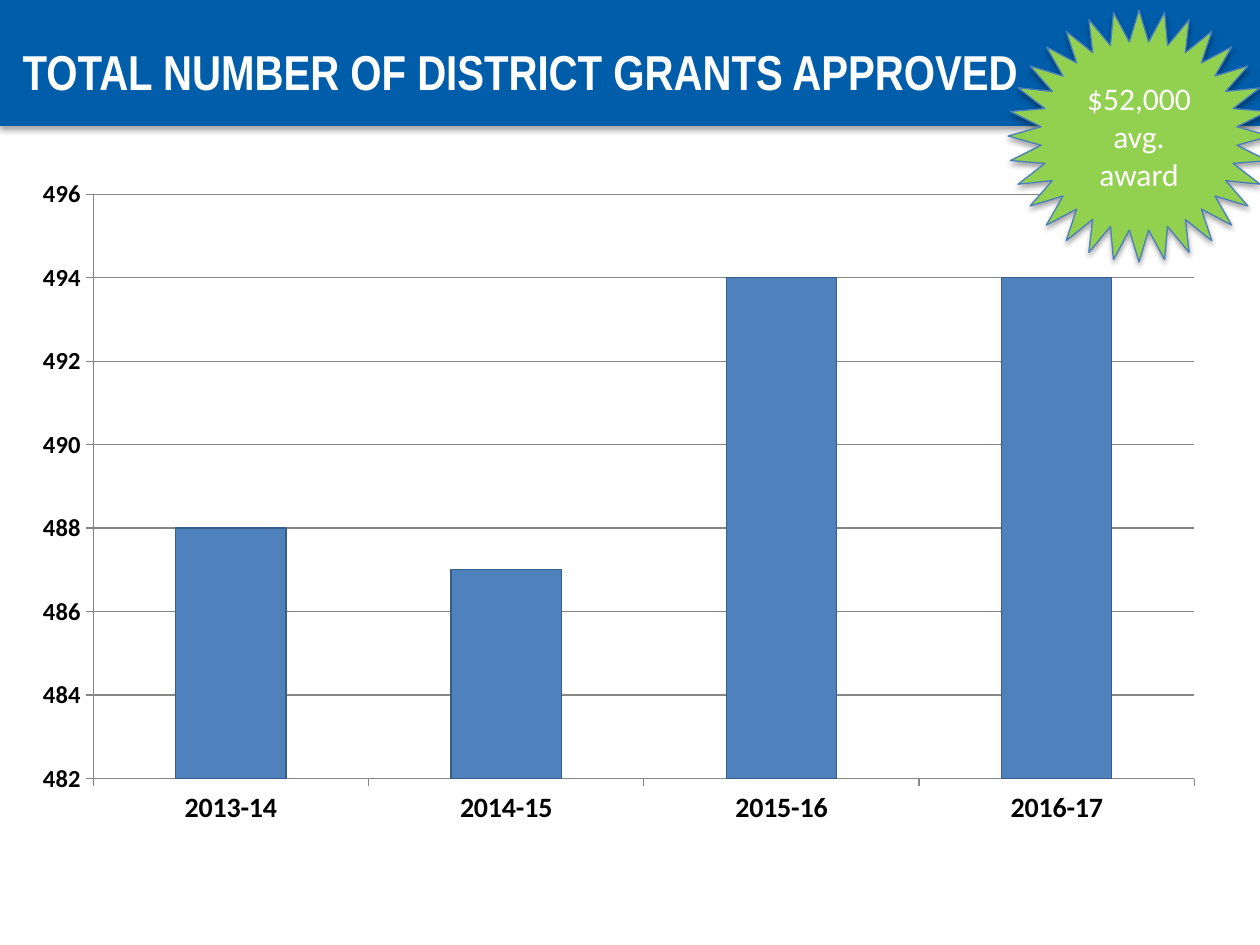
"""Build a slide with a column chart of district grants approved per year."""
from dataclasses import dataclass

from lxml.etree import SubElement
from pptx import Presentation
from pptx.chart.data import CategoryChartData
from pptx.dml.color import RGBColor as RGB
from pptx.enum.chart import XL_CHART_TYPE as Chart, XL_TICK_MARK as Tick
from pptx.enum.shapes import MSO_SHAPE as Shape
from pptx.enum.text import MSO_ANCHOR as Anchor, MSO_AUTO_SIZE as Fit, PP_ALIGN as Align
from pptx.oxml import parse_xml
from pptx.oxml.ns import nsdecls, qn
from pptx.util import Inches, Pt


@dataclass(frozen=True)
class Theme:
    band: str = "005DAA"
    star: str = "92D050"
    edge: str = "4B7EBC"
    bar: str = "4F81BD"
    rim: str = "385D8A"
    grid: str = "868686"
    ink: str = "000000"
    white: str = "FFFFFF"
    head: str = "Arial Narrow"
    body: str = "Calibri"
    title: int = 28
    note: int = 18
    cat: int = 16
    val: int = 14


THEME = Theme()


def style(font, name, size, color, bold=False):
    font.name, font.size, font.bold = name, Pt(size), bold
    font.color.rgb = RGB.from_string(color)


def paint(fill, color):
    fill.solid()
    fill.fore_color.rgb = RGB.from_string(color)


def stroke(line, color):
    line.color.rgb = RGB.from_string(color)
    line.width = Pt(0.75)


def cast(shape):
    shape.shadow.inherit = False
    old = shape._element.spPr.find(qn("a:effectLst"))
    old.append(parse_xml(
        f'<a:outerShdw {nsdecls("a")} blurRad="{Pt(3.1)}" dist="{Pt(1.8)}" '
        f'dir="5400000" rotWithShape="0"><a:srgbClr val="{THEME.ink}">'
        '<a:alpha val="35000"/></a:srgbClr></a:outerShdw>'))


def add_form(slide, kind, box, color):
    form = slide.shapes.add_shape(kind, *map(Inches, box))
    paint(form.fill, color)
    cast(form)
    return form


def add_band(slide):
    band = add_form(slide, Shape.RECTANGLE, (0, 0, 10, 1), THEME.band)
    band.line.fill.background()
    slide.shapes._spTree.insert(2, band._element)


def set_title(slide, text):
    title = slide.shapes.title
    title.left, title.top, title.width, title.height = map(
        Inches, (0.08, 0.25, 8.42, 0.53))
    frame = title.text_frame
    frame.text = text
    frame.auto_size, frame.vertical_anchor = Fit.NONE, Anchor.TOP
    frame.margin_top = Inches(0.08)
    par = frame.paragraphs[0]
    par.alignment = Align.LEFT
    style(par.font, THEME.head, THEME.title, THEME.white, True)


def set_axis(axis, size):
    style(axis.tick_labels.font, THEME.body, size, THEME.ink, True)
    axis.major_tick_mark, axis.minor_tick_mark = Tick.OUTSIDE, Tick.NONE
    stroke(axis.format.line, THEME.grid)


def set_plot(chart, **parts):
    area = chart._chartSpace.chart.plotArea
    for old in area.findall(qn("c:layout")):
        area.remove(old)
    layout = parse_xml(f'<c:layout {nsdecls("c")}/>')
    area.insert(0, layout)
    manual = SubElement(layout, qn("c:manualLayout"))
    modes = {"layoutTarget": "inner", "xMode": "edge", "yMode": "edge"}
    for tag, val in {**modes, **parts}.items():
        SubElement(manual, qn(f"c:{tag}")).set("val", str(val))


def add_chart(slide, years, counts):
    data = CategoryChartData(number_format="General")
    data.categories = years
    data.add_series("Series 1", counts)
    box = map(Inches, (0.17, 1.33, 9.5, 5.33))
    chart = slide.shapes.add_chart(Chart.COLUMN_CLUSTERED, *box, data).chart
    chart.has_legend = chart.has_title = False
    style(chart.font, THEME.body, THEME.note, THEME.ink)
    set_plot(chart, x=0.06, y=0.04, w=0.92, h=0.87)
    plot = chart.plots[0]
    plot.gap_width, plot.vary_by_categories = 150, False
    bars = plot.series[0].format
    paint(bars.fill, THEME.bar)
    stroke(bars.line, THEME.rim)
    set_axis(chart.category_axis, THEME.cat)
    axis = chart.value_axis
    set_axis(axis, THEME.val)
    axis.minimum_scale, axis.maximum_scale, axis.major_unit = 482, 496, 2
    axis.tick_labels.number_format = "#,##0"
    axis.tick_labels.number_format_is_linked = False
    axis.has_major_gridlines = True
    stroke(axis.major_gridlines.format.line, THEME.grid)


def add_star(slide, text):
    star = add_form(slide, Shape.STAR_32_POINT, (8, 0.08, 2.08, 2), THEME.star)
    stroke(star.line, THEME.edge)
    frame = star.text_frame
    frame.text = text
    frame.word_wrap, frame.vertical_anchor = True, Anchor.MIDDLE
    par = frame.paragraphs[0]
    par.alignment = Align.CENTER
    style(par.font, THEME.body, THEME.note, THEME.white)


def main():
    deck = Presentation()
    deck.slide_width, deck.slide_height = Inches(10), Inches(7.5)
    slide = deck.slides.add_slide(deck.slide_layouts[5])
    add_band(slide)
    set_title(slide, "TOTAL NUMBER OF DISTRICT GRANTS APPROVED")
    add_chart(slide, ("2013-14", "2014-15", "2015-16", "2016-17"),
              (488, 487, 494, 494))
    add_star(slide, "$52,000 avg. award")
    deck.save("out.pptx")


if __name__ == "__main__":
    main()
